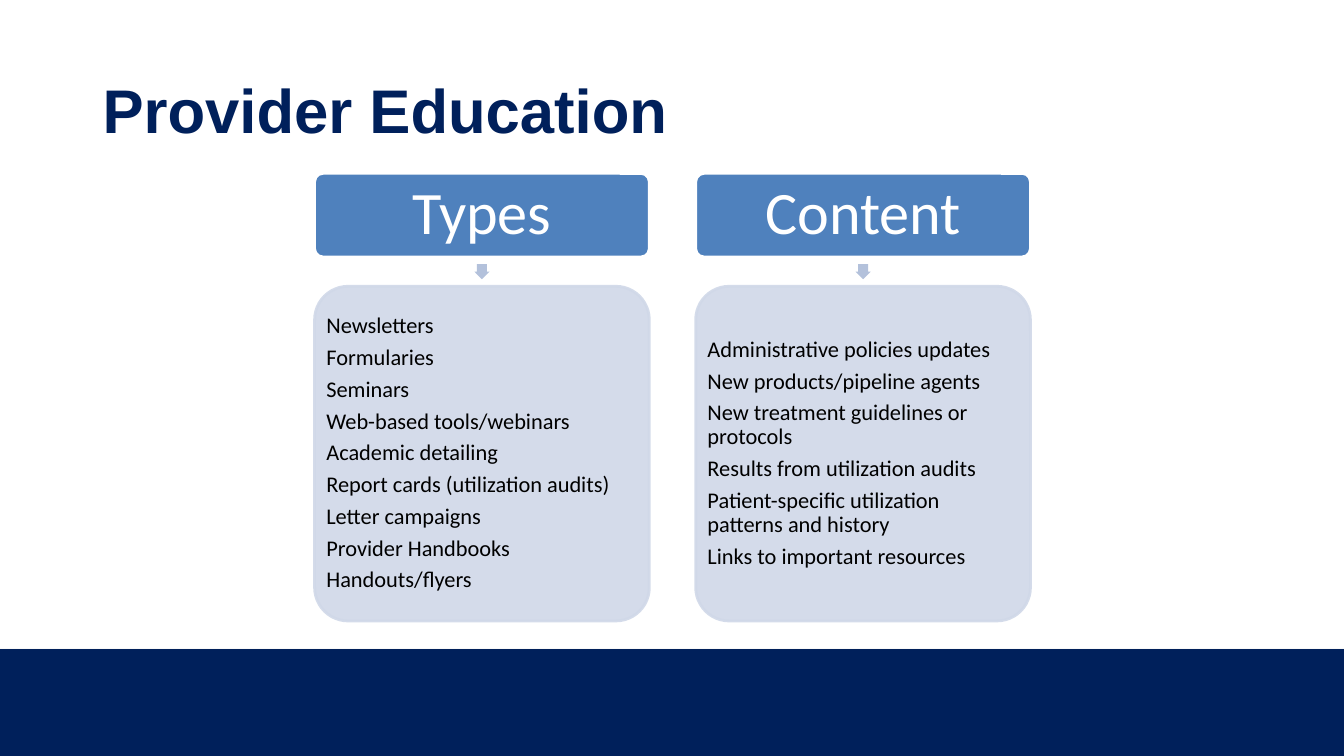
from dataclasses import dataclass

from lxml import etree
from pptx import Presentation
from pptx import util as u
from pptx.dml.color import RGBColor
from pptx.enum import shapes, text
from pptx.oxml.ns import qn

NAVY = RGBColor(0x00, 0x20, 0x5B)
PALE = RGBColor(0xF8, 0xF8, 0xF8)
BLUE = RGBColor(0x4F, 0x81, 0xBD)
MIST = RGBColor(0xD0, 0xD8, 0xE8)
STEEL = RGBColor(0xB3, 0xC1, 0xDB)
WHITE = RGBColor(0xFF, 0xFF, 0xFF)
BLACK = RGBColor(0x00, 0x00, 0x00)

KIND = shapes.MSO_SHAPE
LEFT, PITCH, WIDTH = 3.12, 3.78, 3.32
ARROW = 0.15


@dataclass
class Column:
    title: str
    items: list[str]


@dataclass
class Style:
    size: float
    color: RGBColor
    align: text.PP_ALIGN
    after: float = 0
    font: str = "Calibri"
    bold: bool = False


HEAD = Style(43, WHITE, text.PP_ALIGN.CENTER)
LIST = Style(16, BLACK, text.PP_ALIGN.LEFT, after=5.4)
TITLE = Style(44, NAVY, text.PP_ALIGN.LEFT, font="Arial", bold=True)

COLUMNS = [
    Column("Types", [
        "Newsletters", "Formularies", "Seminars", "Web-based tools/webinars",
        "Academic detailing", "Report cards (utilization audits)",
        "Letter campaigns", "Provider Handbooks", "Handouts/flyers"]),
    Column("Content", [
        "Administrative policies updates", "New products/pipeline agents",
        "New treatment guidelines or protocols",
        "Results from utilization audits",
        "Patient-specific utilization patterns and history",
        "Links to important resources"]),
]


def add_shape(slide, kind, left: float, top: float, width: float,
              height: float, fill: RGBColor, line: RGBColor | None = None):
    shape = slide.shapes.add_shape(kind, *map(u.Inches, (left, top, width, height)))
    shape.shadow.inherit = False
    shape.fill.solid()
    shape.fill.fore_color.rgb = fill
    if line is None:
        shape.line.fill.background()
    else:
        shape.line.color.rgb = line
        shape.line.width = u.Pt(2)
    return shape


def fade(shape, percent: int) -> None:
    """Set the opacity of a shape's fill and line."""
    for color in shape._element.spPr.iter(qn("a:srgbClr")):
        etree.SubElement(color, qn("a:alpha"), val=str(percent * 1000))


def write(shape, lines: list[str], style: Style, inset_x: float, inset_y: float) -> None:
    frame = shape.text_frame
    frame.word_wrap = True
    frame.vertical_anchor = text.MSO_ANCHOR.MIDDLE
    frame.margin_left = frame.margin_right = u.Inches(inset_x)
    frame.margin_top = frame.margin_bottom = u.Inches(inset_y)
    for i, line in enumerate(lines):
        para = frame.add_paragraph() if i else frame.paragraphs[0]
        para.text = line
        para.alignment = style.align
        para.line_spacing = 0.9
        para.space_after = u.Pt(style.after)
        para.font.name = style.font
        para.font.size = u.Pt(style.size)
        para.font.bold = style.bold
        para.font.color.rgb = style.color


def add_column(slide, column: Column, left: float) -> None:
    head = add_shape(slide, KIND.ROUNDED_RECTANGLE, left, 1.72, WIDTH, 0.83, BLUE, WHITE)
    head.adjustments[0] = 0.1
    write(head, [column.title], HEAD, 0.06, 0.06)

    arrow = add_shape(slide, KIND.DOWN_ARROW, left + (WIDTH - ARROW) / 2, 2.62,
                      ARROW, ARROW, STEEL)
    arrow.adjustments[0] = 0.667

    panel = add_shape(slide, KIND.ROUNDED_RECTANGLE, left, 2.84, WIDTH, WIDTH, MIST, MIST)
    panel.adjustments[0] = 0.1
    fade(panel, 90)
    write(panel, column.items, LIST, 0.02, 0.02)


def main() -> None:
    deck = Presentation()
    deck.slide_width, deck.slide_height = u.Inches(13.33), u.Inches(7.5)
    slide = deck.slides.add_slide(deck.slide_layouts[6])

    # Footer band with a pale edge
    for top, color in ((6.43, PALE), (6.44, NAVY)):
        add_shape(slide, KIND.RECTANGLE, 0, top, 13.33, 7.5 - top, color)

    # Title
    title = slide.shapes.add_textbox(*map(u.Inches, (0.92, 0.4, 11.5, 1.45)))
    write(title, ["Provider Education"], TITLE, 0.1, 0.05)

    # Columns
    for i, column in enumerate(COLUMNS):
        add_column(slide, column, LEFT + i * PITCH)

    deck.save("out.pptx")


if __name__ == "__main__":
    main()
